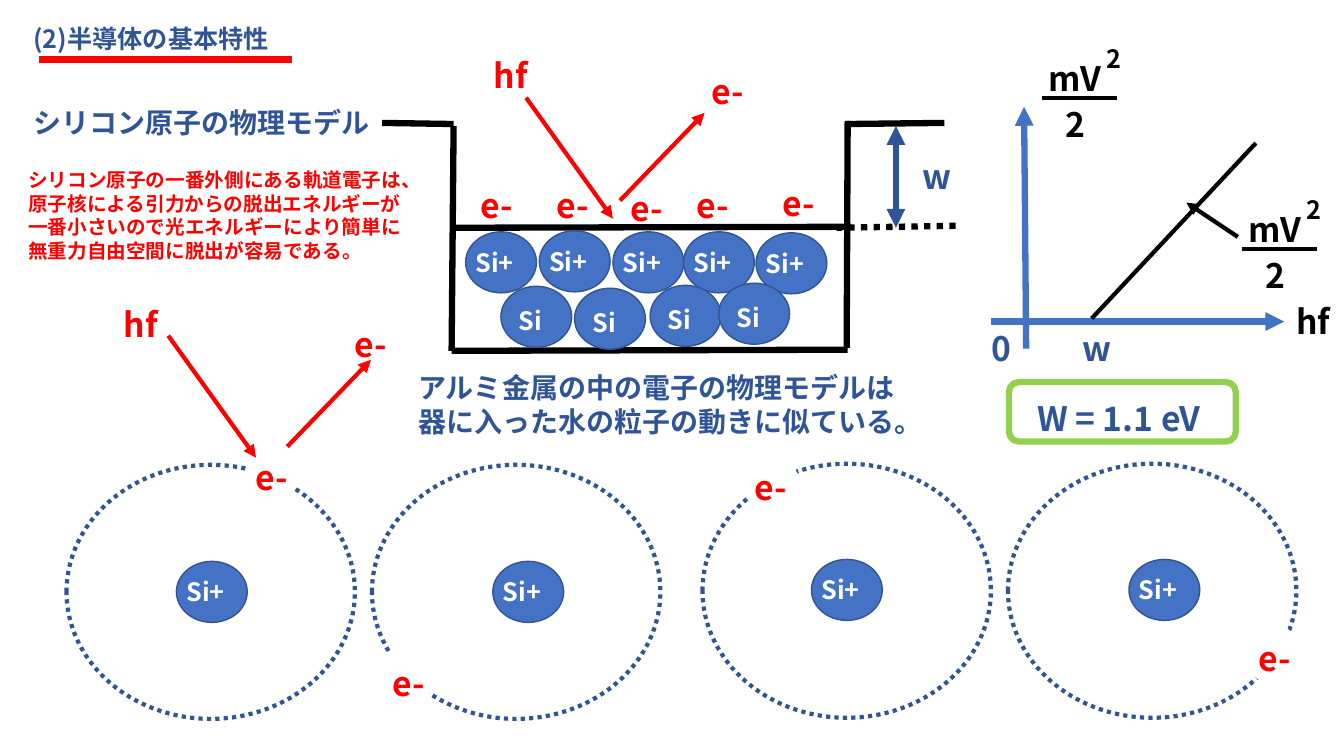
from dataclasses import dataclass

from lxml.etree import SubElement
from pptx import Presentation
from pptx.dml.color import RGBColor
from pptx.enum.dml import MSO_LINE
from pptx.enum.shapes import MSO_CONNECTOR, MSO_SHAPE
from pptx.enum.text import MSO_ANCHOR, MSO_AUTO_SIZE, PP_ALIGN
from pptx.oxml.ns import qn
from pptx.util import Pt

FONT = "Noto Sans CJK JP"
NAVY = RGBColor(0x2F, 0x55, 0x97)
EDGE = RGBColor(0x32, 0x54, 0x91)
BLUE = RGBColor(0x44, 0x72, 0xC4)
RED = RGBColor(0xFF, 0x00, 0x00)
GREEN = RGBColor(0x92, 0xD0, 0x50)
BLACK = RGBColor(0x00, 0x00, 0x00)
WHITE = RGBColor(0xFF, 0xFF, 0xFF)

Point = tuple[float, float]
ION_SIZE = (50.6, 43.6)
ORBIT_SIZE = (206, 181.5)
GAP_SIZE = (36.7, 43.2)


@dataclass
class Label:
    text: str
    at: Point
    color: RGBColor = RED
    size: float = 24
    width: float = 79


@dataclass
class Line:
    start: Point
    end: Point
    color: RGBColor = BLACK
    weight: float = 4.5
    arrows: str = ""  # "tail" or "head tail"
    dotted: bool = False


@dataclass
class Atom:
    orbit: Point
    nucleus: Point
    gap: Point
    electron: Point


WELL = [
    Line((324, 90), (322.6, 250.6)),
    Line((605.5, 249.8), (322.6, 250.6)),
    Line((605.5, 86.4), (604.8, 248.4)),
    Line((324, 88.6), (272.9, 87.8)),
    Line((674.6, 87.8), (604.8, 88.6)),
    Line((607.7, 162), (324.7, 162.7)),
]
DEPTH = [
    Line((682.6, 161.3), (597.6, 162.7), dotted=True),
    Line((640, 90), (640, 162.7), NAVY, arrows="head tail"),
]
RAYS = [
    Line((375.8, 69.8), (437.8, 156.2), RED, 3, "tail"),
    Line((442.8, 143.3), (503.3, 80.6), RED, 3, "tail"),
    Line((120.2, 239.8), (182.9, 326.9), RED, 3, "tail"),
    Line((205.2, 319), (265, 257), RED, 3, "tail"),
]
GRAPH = [
    Line((707.8, 229.7), (917.3, 229.7), BLUE, arrows="tail"),
    Line((733, 249.1), (731.5, 76.3), BLUE, arrows="tail"),
    Line((779.8, 227.5), (897.1, 102.2), weight=3),
    Line((884.2, 169.2), (847.4, 144.7), weight=3, arrows="tail"),
]
ATOMS = [
    Atom((47.5, 332), (126, 401), (175.7, 317.5), (175.7, 322.6)),
    Atom((265.7, 332), (352, 401), (274.3, 458.6), (273.6, 470.2)),
    Atom((501.8, 331.2), (579.6, 399.6), (533.5, 324.7), (532, 329.8)),
    Atom((720, 331.2), (806.4, 399.6), (889.2, 444.2), (892, 452.2)),
]
SURFACE_IONS = [(332.6, 165.6), (385.2, 164.9), (437.8, 165.6), (488.2, 165.6), (540, 166.3)]
INNER_ATOMS = [(357.8, 204.5), (410.4, 205.9), (464.4, 203.8), (513.4, 202.3)]
ELECTRONS = [(336.2, 128.9), (390.2, 128.9), (443.5, 131), (490.3, 128.2), (552.2, 127.4),
             (501, 46.8), (246.2, 227.5)]
LABELS = [
    Label("シリコン原子の物理モデル", (16.6, 72), NAVY, 20, 257),
    Label("シリコン原子の一番外側にある軌道電子は、\n原子核による引力からの脱出エネルギーが\n"
          "一番小さいので光エネルギーにより簡単に\n無重力自由空間に脱出が容易である。",
          (13, 116.6), RED, 14, 301.7),
    Label("アルミ金属の中の電子の物理モデルは\n器に入った水の粒子の動きに似ている。",
          (291.6, 261.4), NAVY, 20, 378),
    Label("hf", (345.6, 36)),
    Label("hf", (81.4, 213.8)),
    Label("w", (651.6, 108), NAVY),
    Label("w", (766.1, 230.4), NAVY),
    Label("0", (701.3, 230.4), NAVY, width=30),
    Label("hf", (918.7, 211.7), BLACK, width=41),
    Label("W = 1.1 eV", (733.7, 280.8), NAVY, width=151),
]


def write(tf, text: str, color: RGBColor, size: float) -> None:
    tf.word_wrap = True
    tf.auto_size = MSO_AUTO_SIZE.NONE
    tf.vertical_anchor = MSO_ANCHOR.TOP
    for i, line in enumerate(text.split("\n")):
        p = tf.paragraphs[0] if i == 0 else tf.add_paragraph()
        p.alignment = PP_ALIGN.LEFT
        r = p.add_run()
        r.text = line
        r.font.name, r.font.size, r.font.bold = FONT, Pt(size), True
        r.font.color.rgb = color
        SubElement(r._r.get_or_add_rPr(), qn("a:ea")).set("typeface", FONT)


def add_label(shapes, label: Label) -> None:
    lines = label.text.count("\n") + 1
    sp = shapes.add_textbox(Pt(label.at[0]), Pt(label.at[1]), Pt(label.width),
                            Pt(label.size * 1.2 * lines + 7.2))
    write(sp.text_frame, label.text, label.color, label.size)


def add_line(shapes, line: Line) -> None:
    c = shapes.add_connector(MSO_CONNECTOR.STRAIGHT, *map(Pt, line.start + line.end))
    c.line.color.rgb, c.line.width = line.color, Pt(line.weight)
    if line.dotted:
        c.line.dash_style = MSO_LINE.ROUND_DOT
    for end in line.arrows.split():
        SubElement(c.line._get_or_add_ln(), qn(f"a:{end}End")).set("type", "triangle")
    SubElement(c._element.spPr, qn("a:effectLst"))


def add_outline(shapes, kind: MSO_SHAPE, at: Point, size: Point, fill: RGBColor,
                edge: RGBColor, weight: float = 1, dotted: bool = False) -> None:
    sp = shapes.add_shape(kind, *map(Pt, at + size))
    sp.shadow.inherit = False
    sp.fill.solid()
    sp.fill.fore_color.rgb = fill
    sp.line.color.rgb, sp.line.width = edge, Pt(weight)
    if dotted:
        sp.line.dash_style = MSO_LINE.ROUND_DOT


def add_ion(shapes, at: Point, text: str = "Si+", shift: Point = (0, 7.2)) -> None:
    add_outline(shapes, MSO_SHAPE.OVAL, at, ION_SIZE, BLUE, EDGE)
    add_label(shapes, Label(text, (at[0] + shift[0], at[1] + shift[1]), WHITE, 18))


def add_energy_fraction(shapes, x: float, y: float) -> None:
    """Draw mV²/2 with its bar starting at (x, y)."""
    add_label(shapes, Label("mV", (x - 2.6, y - 32), BLACK))
    add_label(shapes, Label("2", (x + 38.9, y - 42.4), BLACK, 18, 30))
    add_line(shapes, Line((x, y), (x + 53.6, y), weight=3))
    add_label(shapes, Label("2", (x + 9.6, y + 0.8), BLACK, width=30))


def main() -> None:
    prs = Presentation()
    prs.slide_width, prs.slide_height = Pt(960), Pt(540)
    slide = prs.slides.add_slide(prs.slide_layouts[5])
    shapes = slide.shapes

    # Title
    title = shapes.title
    title.left, title.top, title.width, title.height = Pt(16.6), Pt(13), Pt(242), Pt(29)
    write(title.text_frame, "(2)半導体の基本特性", NAVY, 18)
    add_line(shapes, Line((28.1, 42.5), (208.8, 42.5), RED))

    # Atoms with their dotted orbits
    for atom in ATOMS:
        add_outline(shapes, MSO_SHAPE.OVAL, atom.orbit, ORBIT_SIZE, WHITE, EDGE, 3, True)
        add_outline(shapes, MSO_SHAPE.OVAL, atom.gap, GAP_SIZE, WHITE, WHITE)
        add_ion(shapes, atom.nucleus)
        add_label(shapes, Label("e-", atom.electron))

    # Potential well filled with silicon
    for line in WELL:
        add_line(shapes, line)
    for at in SURFACE_IONS:
        add_ion(shapes, at)
    for at in INNER_ATOMS:
        add_ion(shapes, at, "Si", (5.6, 10.1))
    for at in ELECTRONS:
        add_label(shapes, Label("e-", at))

    # Well depth, light rays and energy graph
    for line in DEPTH + RAYS + GRAPH:
        add_line(shapes, line)
    add_energy_fraction(shapes, 744.5, 69.8)
    add_energy_fraction(shapes, 887.2, 177.8)

    # Work function frame and remaining texts
    add_outline(shapes, MSO_SHAPE.ROUNDED_RECTANGLE, (720.7, 272.9), (162, 42.5),
                WHITE, GREEN, 4.5)
    for label in LABELS:
        add_label(shapes, label)

    prs.save("out.pptx")


if __name__ == "__main__":
    main()
